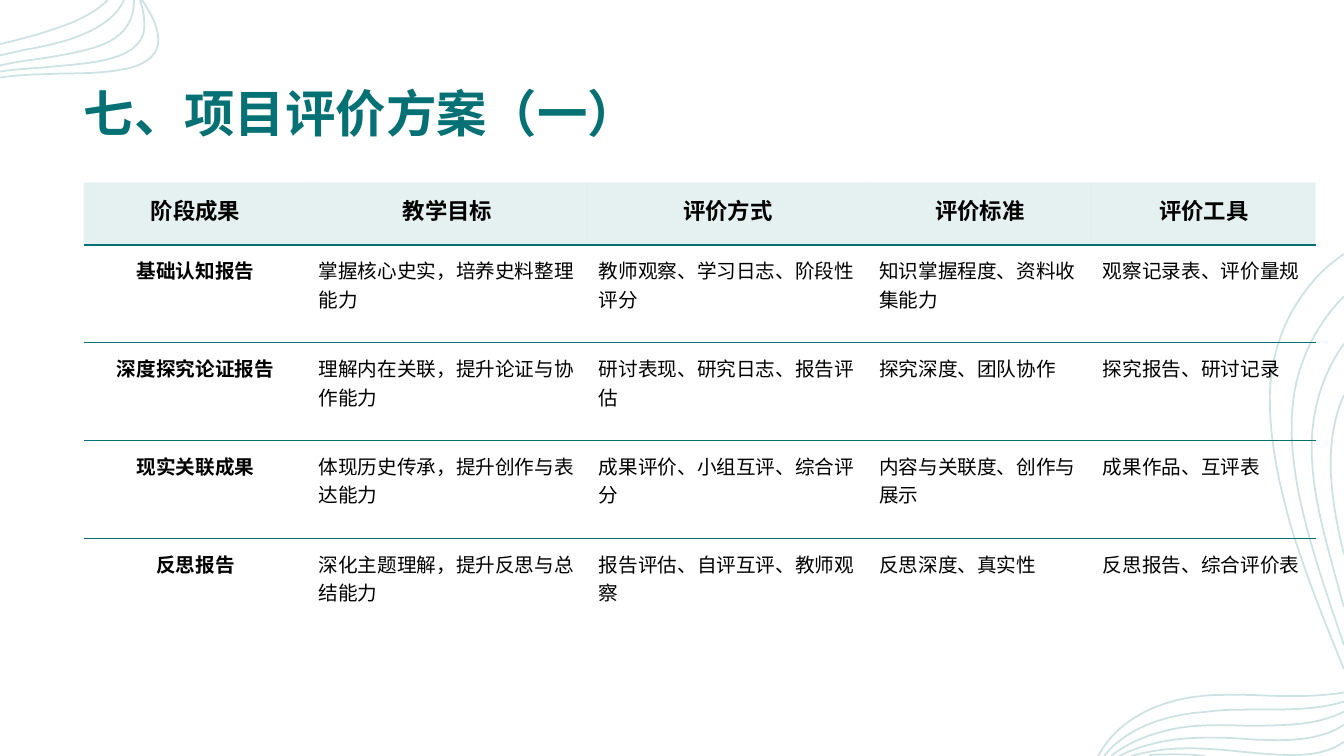
from lxml import etree
from pptx import Presentation
from pptx.dml.color import RGBColor
from pptx.enum.text import MSO_ANCHOR, MSO_AUTO_SIZE, PP_ALIGN
from pptx.oxml.ns import qn
from pptx.util import Inches, Pt

COLORS = {"teal": "057174", "text": "000000"}
FONT = "Lato"
CURVE_STEPS = 10

# Each strand is a start point followed by cubic Bézier triplets, in inches.
CORNER_STRANDS = [
    [(0, 0.44), (0.08, 0.42), (0.16, 0.4), (0.23, 0.38), (0.35, 0.35), (0.48, 0.31),
     (0.59, 0.27), (0.8, 0.2), (0.96, 0.11), (1.07, 0)],
    [(1.41, 0), (1.46, 0.08), (1.51, 0.16), (1.54, 0.24), (1.6, 0.41), (1.59, 0.57),
     (1.34, 0.66), (1.14, 0.72), (0.86, 0.73), (0.59, 0.73), (0.39, 0.74), (0.19, 0.74),
     (0, 0.77)],
    [(0, 0.71), (0.14, 0.69), (0.29, 0.68), (0.43, 0.67), (0.62, 0.65), (0.8, 0.64),
     (0.97, 0.61), (1.12, 0.58), (1.26, 0.54), (1.34, 0.46), (1.42, 0.39), (1.44, 0.3),
     (1.43, 0.21), (1.43, 0.14), (1.41, 0.07), (1.39, 0)],
    [(0, 0.65), (0.13, 0.62), (0.26, 0.6), (0.42, 0.58), (0.72, 0.53), (1.04, 0.48),
     (1.19, 0.34), (1.3, 0.24), (1.33, 0.12), (1.33, 0)],
    [(0, 0.55), (0.09, 0.53), (0.18, 0.51), (0.27, 0.49), (0.39, 0.47), (0.52, 0.44),
     (0.63, 0.41), (0.93, 0.32), (1.15, 0.19), (1.23, 0)],
]
EDGE_STRANDS = [
    [(13.33, 3.92), (13.26, 4.07), (13.23, 4.22), (13.21, 4.37), (13.17, 4.7),
     (13.23, 5.09), (13.33, 5.5)],
    [(13.33, 3.41), (13.2, 3.59), (13.1, 3.81), (13.05, 4.05), (12.96, 4.45),
     (13.03, 4.91), (13.16, 5.4), (13.22, 5.62), (13.27, 5.82), (13.33, 6.02)],
    [(13.33, 2.94), (13.1, 3.17), (12.94, 3.46), (12.86, 3.78), (12.77, 4.17),
     (12.81, 4.63), (12.93, 5.11), (13.03, 5.53), (13.18, 5.95), (13.33, 6.4)],
    [(13.33, 2.52), (13.23, 2.59), (13.13, 2.67), (13.05, 2.76), (12.79, 3.05),
     (12.64, 3.39), (12.6, 3.8), (12.57, 4.23), (12.66, 4.71), (12.8, 5.21),
     (12.94, 5.67), (13.13, 6.15), (13.33, 6.64)],
    [(13.33, 6.87), (13.1, 6.91), (12.82, 6.91), (12.54, 6.9), (12.34, 6.89),
     (12.15, 6.89), (11.96, 6.9), (11.47, 6.94), (11.08, 7.15), (10.89, 7.5)],
    [(13.33, 6.96), (13.08, 7.04), (12.78, 7.04), (12.46, 7.04), (12.28, 7.04),
     (12.12, 7.04), (11.98, 7.06), (11.5, 7.09), (11.15, 7.25), (10.95, 7.5)],
    [(13.33, 7.06), (13.08, 7.19), (12.78, 7.2), (12.37, 7.2), (12.1, 7.19),
     (11.9, 7.19), (11.7, 7.22), (11.42, 7.27), (11.2, 7.36), (11.02, 7.5)],
    [(13.33, 7.19), (13.1, 7.35), (12.75, 7.36), (12.34, 7.33), (11.9, 7.3),
     (11.48, 7.31), (11.1, 7.5)],
    [(13.33, 7.36), (13.1, 7.53), (12.75, 7.5), (12.34, 7.46), (11.95, 7.42),
     (11.6, 7.39), (11.22, 7.5)],
    [(11.4, 7.49), (11.6, 7.48), (11.8, 7.48), (11.95, 7.5)],
]

COLUMN_WIDTHS = [2.22, 2.78, 2.78, 2.22, 2.22]
ROW_HEIGHTS = [0.62] + [0.97] * 4
RULE_WIDTHS = [0, 2, 1, 1, 1, 0]  # points, above the first row to below the last
EVALUATION = [
    ["阶段成果", "教学目标", "评价方式", "评价标准", "评价工具"],
    ["基础认知报告", "掌握核心史实，培养史料整理能力", "教师观察、学习日志、阶段性评分",
     "知识掌握程度、资料收集能力", "观察记录表、评价量规"],
    ["深度探究论证报告", "理解内在关联，提升论证与协作能力", "研讨表现、研究日志、报告评估",
     "探究深度、团队协作", "探究报告、研讨记录"],
    ["现实关联成果", "体现历史传承，提升创作与表达能力", "成果评价、小组互评、综合评分",
     "内容与关联度、创作与展示", "成果作品、互评表"],
    ["反思报告", "深化主题理解，提升反思与总结能力", "报告评估、自评互评、教师观察",
     "反思深度、真实性", "反思报告、综合评价表"],
]


def bezier_points(strand):
    """Return points along a chain of cubic curves, in thousandths of an inch."""
    points = [(x * 1000, y * 1000) for x, y in strand[:1]]
    for first in range(0, len(strand) - 1, 3):
        segment = strand[first:first + 4]
        for step in range(1, CURVE_STEPS + 1):
            t = step / CURVE_STEPS
            weights = [(1 - t) ** 3, 3 * t * (1 - t) ** 2, 3 * t * t * (1 - t), t ** 3]
            points.append(tuple(
                1000 * sum(w * p[axis] for w, p in zip(weights, segment))
                for axis in (0, 1)))
    return points


def set_opacity(parent, percent):
    """Make the solid colour inside an XML element partly transparent."""
    color = next(parent.iter(qn("a:srgbClr")))
    etree.SubElement(color, qn("a:alpha"), val=str(percent * 1000))


teal = RGBColor.from_string(COLORS["teal"])
prs = Presentation()
prs.slide_width, prs.slide_height = Inches(13.33), Inches(7.5)
slide = prs.slides.add_slide(prs.slide_layouts[5])

# Title
title = slide.shapes.title
title.left, title.top = Inches(0.83), Inches(0.69)
title.width, title.height = Inches(11.67), Inches(0.69)
title_frame = title.text_frame
title_format = {"margin_left": 0, "margin_right": 0, "margin_top": 0, "margin_bottom": 0,
                "vertical_anchor": MSO_ANCHOR.MIDDLE, "word_wrap": True,
                "auto_size": MSO_AUTO_SIZE.NONE}
for key, value in title_format.items():
    setattr(title_frame, key, value)
heading = title_frame.paragraphs[0]
heading.text = "七、项目评价方案（一）"
heading.alignment = PP_ALIGN.LEFT
heading.line_spacing = 1.25
for key, value in {"name": FONT, "size": Pt(36), "bold": True}.items():
    setattr(heading.font, key, value)
heading.font.color.rgb = teal

# Wave decorations
for strands in (CORNER_STRANDS, EDGE_STRANDS):
    curves = [bezier_points(strand) for strand in strands]
    builder = slide.shapes.build_freeform(*curves[0][0], scale=Inches(1) / 1000)
    for number, curve in enumerate(curves):
        if number:
            builder.move_to(*curve[0])
        builder.add_line_segments(curve[1:], close=False)
    waves = builder.convert_to_shape()
    waves.shadow.inherit = False
    waves.fill.background()
    waves.line.color.rgb = teal
    waves.line.width = Pt(1.25)
    set_opacity(waves.line._ln, 20)

# Evaluation table
table = slide.shapes.add_table(
    len(ROW_HEIGHTS), len(COLUMN_WIDTHS), Inches(0.83), Inches(1.81),
    Inches(sum(COLUMN_WIDTHS)), Inches(sum(ROW_HEIGHTS))).table
table.first_row = table.horz_banding = False
for column, width in zip(table.columns, COLUMN_WIDTHS):
    column.width = Inches(width)
for row, height in zip(table.rows, ROW_HEIGHTS):
    row.height = Inches(height)

for r, texts in enumerate(EVALUATION):
    for c, text in enumerate(texts):
        cell = table.cell(r, c)
        for side in ("left", "right", "top", "bottom"):
            setattr(cell, f"margin_{side}", Inches(0.11))
        cell_props = cell._tc.get_or_add_tcPr()
        borders = {"lnL": 0, "lnR": 0, "lnT": RULE_WIDTHS[r], "lnB": RULE_WIDTHS[r + 1]}
        for tag, points in borders.items():
            border = etree.SubElement(cell_props, qn(f"a:{tag}"), w=str(Pt(points)))
            if points:
                fill = etree.SubElement(border, qn("a:solidFill"))
                etree.SubElement(fill, qn("a:srgbClr"), val=COLORS["teal"])
            else:
                etree.SubElement(border, qn("a:noFill"))
        if r == 0:
            cell.fill.solid()
            cell.fill.fore_color.rgb = teal
            set_opacity(cell_props.find(qn("a:solidFill")), 10)
        else:
            cell.fill.background()
        is_label = r == 0 or c == 0
        entry = cell.text_frame.paragraphs[0]
        entry.text = text
        entry.alignment = PP_ALIGN.CENTER if is_label else PP_ALIGN.LEFT
        entry_format = {"name": FONT, "size": Pt(14 if r else 16), "bold": is_label}
        for key, value in entry_format.items():
            setattr(entry.font, key, value)
        entry.font.color.rgb = RGBColor.from_string(COLORS["text"])

prs.save("out.pptx")
